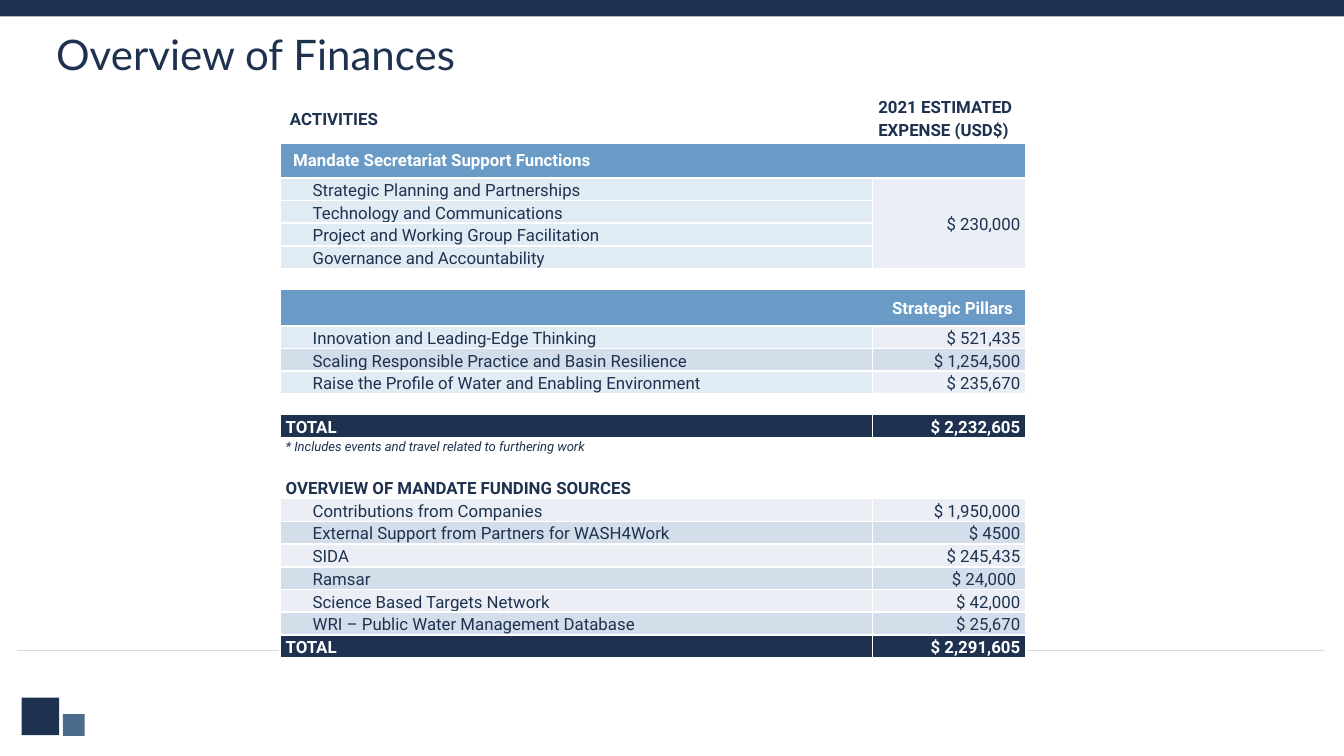
"""Build the finance overview slide with its activities and funding table."""
from lxml.etree import SubElement
from pptx import Presentation
from pptx.dml.color import RGBColor as RGB
from pptx.enum.shapes import MSO_CONNECTOR as CONN, MSO_SHAPE as SHAPE
from pptx.enum.text import MSO_ANCHOR as ANCHOR, PP_ALIGN as ALIGN
from pptx.oxml.ns import qn
from pptx.util import Cm, Pt

COLORS = {
    "navy": "1E3250", "steel": "4D6B8B", "blue": "699BC6", "white": "FFFFFF",
    "sky": "E1EBF4", "mist": "EBEFF5", "band": "D4DEEA", "rule": "D9D9D9",
}
TITLE = "Overview of Finances"
ROWS = [
    ("head", "ACTIVITIES", "2021 ESTIMATED EXPENSE (USD$)"),
    ("section", "Mandate Secretariat Support Functions", ""),
    ("plain", "Strategic Planning and Partnerships", "$ 230,000"),
    ("plain", "Technology and Communications", ""),
    ("plain", "Project and Working Group Facilitation", ""),
    ("plain", "Governance and Accountability", ""),
    ("gap", "", ""),
    ("pillars", "Strategic Pillars", ""),
    ("plain", "Innovation and Leading-Edge Thinking", "$ 521,435"),
    ("banded", "Scaling Responsible Practice and Basin Resilience", "$ 1,254,500"),
    ("plain", "Raise the Profile of Water and Enabling Environment", "$ 235,670"),
    ("gap", "", ""),
    ("total", "TOTAL", "$ 2,232,605"),
    ("note", "* Includes events and travel related to furthering work", ""),
    ("gap", "", ""),
    ("heading", "OVERVIEW OF MANDATE FUNDING SOURCES", ""),
    ("source", "Contributions from Companies", "$ 1,950,000"),
    ("banded", "External Support from Partners for WASH4Work", "$ 4500"),
    ("source", "SIDA", "$ 245,435"),
    ("banded", "Ramsar", "$ 24,000 "),
    ("source", "Science Based Targets Network", "$ 42,000"),
    ("banded", "WRI – Public Water Management Database", "$ 25,670"),
    ("total", "TOTAL", "$ 2,291,605"),
]
ITEM = {"indent": 0.51}
BOLD = {"bold": True}
BOLD_WHITE = {"bold": True, "color": "white"}
STYLES = {
    "head": (0.89, None, None, {"bold": True, "indent": 0.08}),
    "section": (0.66, "blue", "blue", BOLD_WHITE),
    "pillars": (0.66, "blue", "blue", BOLD_WHITE | {"align": ALIGN.RIGHT}),
    "plain": (0.42, "sky", "mist", ITEM),
    "banded": (0.42, "band", "band", ITEM),
    "source": (0.42, "mist", "mist", ITEM),
    "gap": (0.39, "white", "white", {}),
    "total": (0.42, "navy", "navy", BOLD_WHITE),
    "note": (0.34, "white", "white", {"size": 7, "italic": True}),
    "heading": (0.42, "white", "white", BOLD),
}
WIDE = ("section", "pillars", "heading")
PADDED = ("section", "pillars")
COLUMNS = (11.2, 2.9)
SQUARES = [(0.41, 13.18, 0.71, 0.71, "navy"), (1.19, 13.49, 0.41, 0.41, "steel"),
           (0, 0, 25.4, 0.31, "navy")]


def rgb(name):
    return RGB.from_string(COLORS[name])


def write(tf, text, size=9, font="Roboto", color="navy", bold=False, italic=False,
          align=ALIGN.LEFT, indent=0, spacing=1.15):
    p = tf.paragraphs[0]
    p.alignment, p.line_spacing = align, spacing
    if indent:
        p._p.get_or_add_pPr().set("marL", str(Cm(indent)))
    if not text:
        SubElement(p._p, qn("a:endParaRPr"), sz="600")
        return
    r = p.add_run()
    r.text = text
    f = r.font
    f.size, f.name, f.bold, f.italic = Pt(size), font, bold, italic
    f.color.rgb = rgb(color)


def set_borders(cell, kind):
    tc_pr = cell._tc.get_or_add_tcPr()
    for side in "LRTB":
        width = 3 if kind == "head" and side == "B" else 1
        ln = SubElement(tc_pr, qn(f"a:ln{side}"), w=str(Pt(width)))
        SubElement(SubElement(ln, qn("a:solidFill")), qn("a:srgbClr"), val=COLORS["white"])


def style_cell(cell, kind, fill):
    set_borders(cell, kind)
    if fill:
        cell.fill.solid()
        cell.fill.fore_color.rgb = rgb(fill)
    else:
        cell.fill.background()
    pad_x, pad_y = (0.25, 0.13) if kind in PADDED else (0.11, 0)
    cell.margin_left = cell.margin_right = Cm(pad_x)
    cell.margin_top = cell.margin_bottom = Cm(pad_y)
    cell.vertical_anchor = ANCHOR.MIDDLE if kind == "head" else ANCHOR.TOP


def add_finances(s):
    height = sum(STYLES[kind][0] for kind, _, _ in ROWS)
    table = s.shapes.add_table(len(ROWS), 2, Cm(5.29), Cm(1.78),
                               Cm(sum(COLUMNS)), Cm(height)).table
    table.first_row = table.horz_banding = False
    for column, width in zip(table.columns, COLUMNS):
        column.width = Cm(width)
    for i, (kind, label, amount) in enumerate(ROWS):
        row_height, left_fill, right_fill, fmt = STYLES[kind]
        table.rows[i].height = Cm(row_height)
        left, right = table.cell(i, 0), table.cell(i, 1)
        style_cell(left, kind, left_fill)
        style_cell(right, kind, right_fill)
        write(left.text_frame, label, **fmt)
        side = ALIGN.LEFT if kind == "head" else ALIGN.RIGHT
        write(right.text_frame, amount, **(fmt | {"align": side, "indent": 0}))
        if kind in WIDE:
            left.merge(right)
    shared = table.cell(2, 1)
    shared.merge(table.cell(5, 1))
    shared.vertical_anchor = ANCHOR.MIDDLE


def main():
    prs = Presentation()
    prs.slide_width, prs.slide_height = Cm(25.4), Cm(14.28)
    s = prs.slides.add_slide(prs.slide_layouts[6])
    for x, y, w, h, color in SQUARES:
        sp = s.shapes.add_shape(SHAPE.RECTANGLE, Cm(x), Cm(y), Cm(w), Cm(h))
        sp.shadow.inherit = False
        sp.fill.solid()
        sp.fill.fore_color.rgb = rgb(color)
        sp.line.fill.background()
    rule = s.shapes.add_connector(CONN.STRAIGHT, Cm(0.33), Cm(12.29), Cm(25.02), Cm(12.29))
    rule.line.color.rgb, rule.line.width = rgb("rule"), Pt(0.75)
    SubElement(rule._element.spPr, qn("a:effectLst"))
    add_finances(s)
    tf = s.shapes.add_textbox(Cm(0.81), Cm(0.53), Cm(22.99), Cm(1.27)).text_frame
    tf.word_wrap = True
    write(tf, TITLE, size=22.5, font="Lato", spacing=0.9)
    prs.save("out.pptx")


if __name__ == "__main__":
    main()
